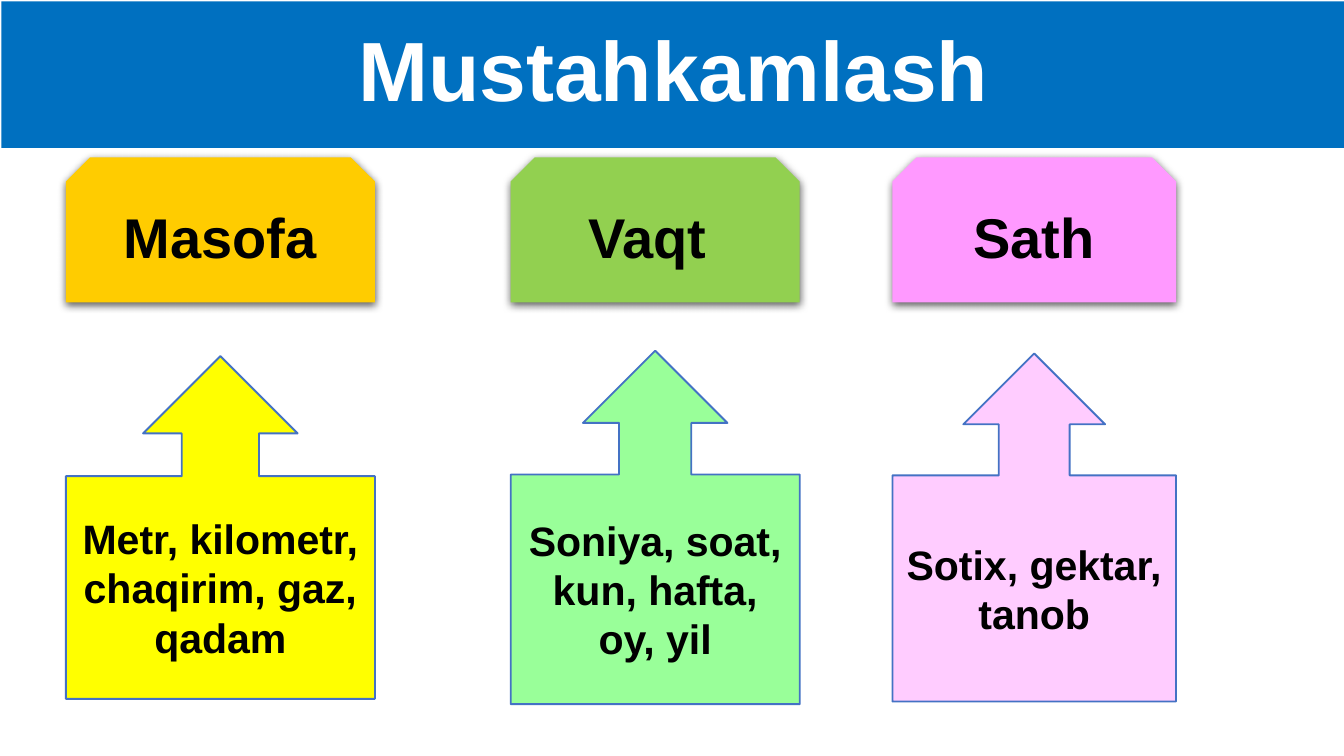
from lxml.etree import SubElement
from pptx import Presentation
from pptx.dml.color import RGBColor
from pptx.enum.shapes import MSO_SHAPE
from pptx.enum.text import MSO_ANCHOR, PP_ALIGN
from pptx.oxml.ns import qn
from pptx.util import Inches, Pt


def color(code):
    return RGBColor.from_string(code)


class SlideBuilder:
    font = "Arial"
    ink = "000000"
    outline = "4472C4"

    def __init__(self, slide):
        self.slide = slide

    def block(self, preset, box, fill, text, size, ink=ink):
        shape = self.slide.shapes.add_shape(preset, *map(Inches, box))
        shape.shadow.inherit = False
        shape.fill.solid()
        shape.fill.fore_color.rgb = color(fill)
        shape.line.fill.background()
        frame = shape.text_frame
        frame.word_wrap = True
        frame.vertical_anchor = MSO_ANCHOR.MIDDLE
        frame.margin_left = frame.margin_right = Inches(0.08)
        paragraph = frame.paragraphs[0]
        paragraph.alignment = PP_ALIGN.CENTER
        run = paragraph.add_run()
        run.text = text
        run.font.name = self.font
        run.font.size = Pt(size)
        run.font.bold = True
        run.font.color.rgb = color(ink)
        return shape

    def banner(self, box, text):
        banner = self.block(MSO_SHAPE.RECTANGLE, box, "0070C0", text, 45, "FFFFFF")
        banner.text_frame.paragraphs[0].line_spacing = 0.9

    def units(self, box, fill, text):
        callout = self.block(MSO_SHAPE.UP_ARROW_CALLOUT, box, fill, text, 22)
        callout.line.color.rgb = color(self.outline)
        callout.line.width = Pt(1)

    def quantity(self, box, fill, text):
        card = self.block(MSO_SHAPE.SNIP_2_SAME_RECTANGLE, box, fill, text, 30)
        effects = card._element.spPr.find(qn("a:effectLst"))
        shadow = SubElement(
            effects, qn("a:outerShdw"), blurRad=str(Pt(4.5)), dist=str(Pt(1.5)),
            dir="5400000", algn="ctr", rotWithShape="0",
        )
        tint = SubElement(shadow, qn("a:srgbClr"), val=self.ink)
        SubElement(tint, qn("a:alpha"), val="63000")


def main():
    presentation = Presentation()
    presentation.slide_width = Inches(10)
    presentation.slide_height = Inches(10 * 9 / 16)
    builder = SlideBuilder(presentation.slides.add_slide(presentation.slide_layouts[6]))

    builder.banner((0.01, 0.01, 10, 1.09), "Mustahkamlash")

    columns = [
        (0.49, 2.3, "Masofa", "FFCC00", 2.65, 2.55, "FFFF00",
         "Metr, kilometr, chaqirim, gaz, qadam"),
        (3.8, 2.15, "Vaqt ", "92D050", 2.61, 2.63, "99FF99",
         "Soniya, soat, kun, hafta, oy, yil"),
        (6.64, 2.11, "Sath", "FF99FF", 2.63, 2.59, "FFCCFF",
         "Sotix, gektar, tanob"),
    ]
    for left, width, quantity, card_fill, top, height, units_fill, units in columns:
        builder.units((left, top, width, height), units_fill, units)
        builder.quantity((left, 1.17, width, 1.08), card_fill, quantity)

    presentation.save("out.pptx")


if __name__ == "__main__":
    main()
